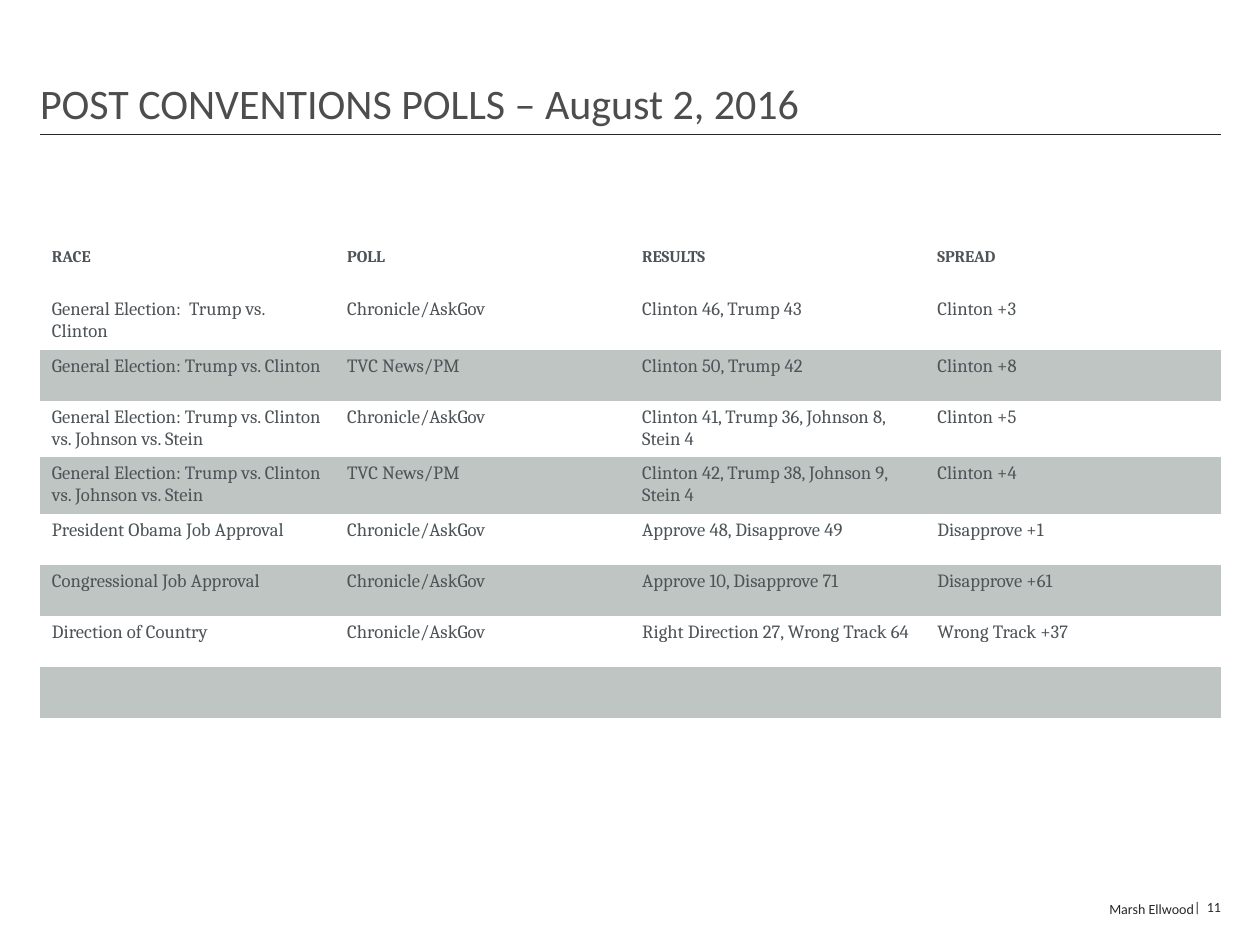
from lxml.etree import SubElement
from pptx import Presentation
from pptx.dml.color import RGBColor
from pptx.enum.text import MSO_ANCHOR as ANCHOR, MSO_AUTO_SIZE as AUTO, PP_ALIGN as ALIGN
from pptx.oxml.ns import qn
from pptx.util import Pt

COLORS = {"rule": "26292B", "title": "4D4D4D", "body": "4D5357", "band": "BEC5C2"}
LEFT, WIDTH = 17.15, 506
ROW, TALL_ROW = 21.95, 24.2
NO_STYLE = "{2D5ABB26-0587-4C30-8999-92F81FD0307C}"
POLLS = [
    ("RACE", "POLL", "RESULTS", "SPREAD"),
    ("General Election:  Trump vs. Clinton", "Chronicle/AskGov",
     "Clinton 46, Trump 43", "Clinton +3"),
    ("General Election: Trump vs. Clinton", "TVC News/PM",
     "Clinton 50, Trump 42", "Clinton +8"),
    ("General Election: Trump vs. Clinton vs. Johnson vs. Stein", "Chronicle/AskGov",
     "Clinton 41, Trump 36, Johnson 8, Stein 4", "Clinton +5"),
    ("General Election: Trump vs. Clinton vs. Johnson vs. Stein", "TVC News/PM",
     "Clinton 42, Trump 38, Johnson 9, Stein 4", "Clinton +4"),
    ("President Obama Job Approval", "Chronicle/AskGov",
     "Approve 48, Disapprove 49", "Disapprove +1"),
    ("Congressional Job Approval", "Chronicle/AskGov",
     "Approve 10, Disapprove 71", "Disapprove +61"),
    ("Direction of Country", "Chronicle/AskGov",
     "Right Direction 27, Wrong Track 64", "Wrong Track +37"),
    ("",) * 4,
    ("",) * 4,
]
TALL_ROWS = {1, 3, 4}


def rgb(name):
    return RGBColor.from_string(COLORS[name])


def add_run(p, text, font, size, color, bold=False):
    r = p.add_run()
    r.text = text
    r.font.name, r.font.size, r.font.bold = font, Pt(size), bold
    r.font.color.rgb = rgb(color)


def set_frame(tf, anchor, margins, wrap=True):
    tf.auto_size, tf.word_wrap, tf.vertical_anchor = AUTO.NONE, wrap, anchor
    tf.margin_left, tf.margin_top, tf.margin_right, tf.margin_bottom = map(Pt, margins)


def set_title(s, text):
    sp = s.shapes.title
    sp.left, sp.top, sp.width, sp.height = map(Pt, (LEFT, 22.3, WIDTH, 35.3))
    set_frame(sp.text_frame, ANCHOR.BOTTOM, (0, 2.9, 0, 2.9))
    p = sp.text_frame.paragraphs[0]
    p.alignment = ALIGN.LEFT
    add_run(p, text, "Calibri", 18, "title")


def add_rule(s, y):
    cx = s.shapes.add_connector(1, Pt(LEFT), Pt(y), Pt(LEFT + WIDTH), Pt(y))
    cx.line.color.rgb = rgb("rule")
    cx.line.width = Pt(0.5)
    SubElement(cx._element.spPr, qn("a:effectLst"))


def add_footer(s, text, box, right_inset, wrap):
    tf = s.shapes.add_textbox(*map(Pt, box)).text_frame
    set_frame(tf, ANCHOR.MIDDLE, (0, 3.6, right_inset, 3.6), wrap)
    p = tf.paragraphs[0]
    p.alignment = ALIGN.RIGHT
    add_run(p, text, "Calibri", 6, "rule")


def fill_cell(cell, text, header, banded):
    cell.margin_left = cell.margin_right = Pt(5.15)
    cell.margin_top = cell.margin_bottom = Pt(2.57)
    if banded:
        cell.fill.solid()
        cell.fill.fore_color.rgb = rgb("band")
    else:
        cell.fill.background()
    p = cell.text_frame.paragraphs[0]
    if text:
        add_run(p, text, "Cambria", 7 if header else 8, "body", header)
    else:
        SubElement(p._p, qn("a:endParaRPr"), sz="800")


def add_polls(s, top):
    heights = [TALL_ROW if i in TALL_ROWS else ROW for i in range(len(POLLS))]
    columns = len(POLLS[0])
    frame = s.shapes.add_table(len(POLLS), columns, Pt(LEFT), Pt(top), Pt(WIDTH), Pt(sum(heights)))
    table = frame.table
    table._tbl.tblPr.find(qn("a:tableStyleId")).text = NO_STYLE
    table.first_row = table.horz_banding = False
    for column in table.columns:
        column.width = Pt(WIDTH / columns)
    for i, (values, height) in enumerate(zip(POLLS, heights)):
        table.rows[i].height = Pt(height)
        for j, text in enumerate(values):
            fill_cell(table.cell(i, j), text, i == 0, i > 0 and i % 2 == 0)


def main():
    """Build the poll results slide."""
    prs = Presentation()
    prs.slide_width, prs.slide_height = Pt(540), Pt(405)
    s = prs.slides.add_slide(prs.slide_layouts[5])
    set_title(s, "POST CONVENTIONS POLLS – August 2, 2016")
    add_rule(s, 57.8)
    add_polls(s, 103.7)
    add_footer(s, "Marsh Ellwood", (340.5, 381, 171.2, 17.3), 0, True)
    add_footer(s, "|  11", (511.5, 381.6, 18.9, 14.4), 7.2, False)
    prs.save("out.pptx")


if __name__ == "__main__":
    main()
